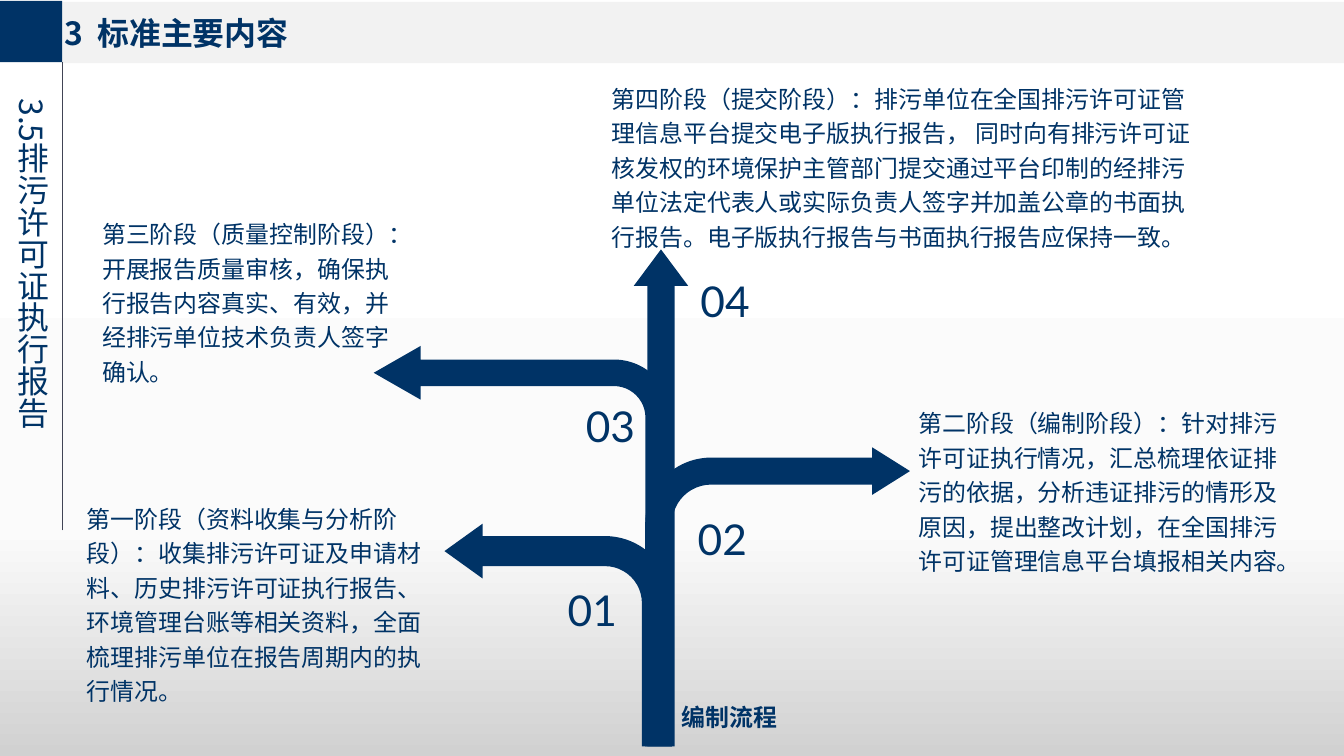
import lxml.etree
import pptx
import pptx.dml.color
import pptx.enum.dml
import pptx.enum.shapes
import pptx.enum.text
import pptx.oxml.ns
import pptx.util

Inches = pptx.util.Inches
Pt = pptx.util.Pt
SHAPES = pptx.enum.shapes.MSO_SHAPE
ANCHOR = pptx.enum.text.MSO_ANCHOR
FIT = pptx.enum.text.MSO_AUTO_SIZE
qn = pptx.oxml.ns.qn

COLOURS = {"navy": "003366", "band": "F2F2F2", "rule": "414455"}
BACKGROUND_STOPS = {14: "FFFFFF", 70: "FBFBFB", 100: "D1D1D1"}
CHINESE = "Noto Sans CJK SC"
LATIN = "Lato"
NO_MARGINS = {f"margin_{side}": 0 for side in ("left", "top", "right", "bottom")}
LABEL_FRAME = {"word_wrap": False, "auto_size": FIT.SHAPE_TO_FIT_TEXT}
STAGE_FRAME = {"word_wrap": True, "vertical_anchor": ANCHOR.MIDDLE}

# Stage descriptions: place and wording
STAGES = [
    ((0.81, 5.1, 3.84, 2.4),
     "第一阶段（资料收集与分析阶段）：收集排污许可证及申请材料、历史排污许可证执行报告、"
     "环境管理台账等相关资料，全面梳理排污单位在报告周期内的执行情况。"),
    ((9.51, 3.51, 4.12, 3.22),
     "第二阶段（编制阶段）：针对排污许可证执行情况，汇总梳理依证排污的依据，"
     "分析违证排污的情形及原因，提出整改计划，在全国排污许可证管理信息平台填报相关内容。"),
    ((0.97, 1.96, 3.31, 2.36),
     "第三阶段（质量控制阶段）：开展报告质量审核，确保执行报告内容真实、有效，"
     "并经排污单位技术负责人签字确认。"),
    ((6.3, 0.8, 6.43, 1.85),
     "第四阶段（提交阶段）：排污单位在全国排污许可证管理信息平台提交电子版执行报告， "
     "同时向有排污许可证核发权的环境保护主管部门提交通过平台印制的经排污单位法定代表人"
     "或实际负责人签字并加盖公章的书面执行报告。电子版执行报告与书面执行报告应保持一致。"),
]
NUMBER_PLACES = [(5.84, 5.67, 0.91, 1.3), (7.2, 4.93, 0.78, 1.3),
                 (6.03, 3.75, 0.88, 1.3), (7.23, 2.44, 0.94, 1.3)]

# Arrows: shape, place, adjustments, mirrored
ARROWS = [
    (SHAPES.UP_ARROW, (6.63, 2.61, 0.57, 5.2), (0.5, 0.671), False),
    (SHAPES.BENT_ARROW, (3.91, 3.62, 3.12, 3.64), (0.089, 0.09, 0.157, 0.195), True),
    (SHAPES.BENT_ARROW, (6.75, 4.68, 2.77, 3.13), (0.102, 0.09, 0.143, 0.249), False),
    (SHAPES.BENT_ARROW, (4.65, 5.48, 2.38, 2.33), (0.135, 0.123, 0.171, 0.301), True),
]


def rgb(name):
    return pptx.dml.color.RGBColor.from_string(COLOURS[name])


def apply(target, values):
    for name, value in values.items():
        setattr(target, name, value)


def paint_background(page):
    fill = page.background.fill
    fill.gradient()
    fill.gradient_angle = 270
    stops = page.element.xpath(".//p:bg//a:gsLst")[0]
    for stop in list(stops):
        stops.remove(stop)
    for percent, colour in BACKGROUND_STOPS.items():
        stop = lxml.etree.SubElement(stops, qn("a:gs"), pos=str(percent * 1000))
        lxml.etree.SubElement(stop, qn("a:srgbClr"), val=colour)


def add_filled(page, kind, place, colour, adjustments=(), mirrored=False):
    shape = page.shapes.add_shape(kind, *map(Inches, place))
    shape.shadow.inherit = False
    shape.fill.solid()
    shape.fill.fore_color.rgb = rgb(colour)
    shape.line.fill.background()
    for index, value in enumerate(adjustments):
        shape.adjustments[index] = value
    if mirrored:
        shape.element.spPr.find(qn("a:xfrm")).set("flipH", "1")


def add_rule(page, start, end):
    line = page.shapes.add_connector(
        pptx.enum.shapes.MSO_CONNECTOR.STRAIGHT, *map(Inches, start + end))
    line.line.color.rgb = rgb("rule")
    line.line.width = Pt(0.25)
    lxml.etree.SubElement(line.element.spPr, qn("a:effectLst"))


def add_span(para, text, size, font=CHINESE, bold=False):
    span = para.add_run()
    span.text = text
    apply(span.font, {"size": Pt(size), "name": font, "bold": bold})
    span.font.color.rgb = rgb("navy")
    lxml.etree.SubElement(span.font._element, qn("a:ea"), typeface=font)
    return span


def add_text(page, place, text, size, frame, font=CHINESE, bold=False, spacing=None):
    box = page.shapes.add_textbox(*map(Inches, place))
    apply(box.text_frame, frame)
    para = box.text_frame.paragraphs[0]
    apply(para, spacing or {})
    if text:
        add_span(para, text, size, font, bold)
    return box


def add_stage_text(page, place, text, size, font):
    spacing = {"line_spacing": 1.2, "space_before": Pt(size * 0.2)}
    add_text(page, place, text, size, STAGE_FRAME, font, spacing=spacing)


def add_title(page):
    box = add_text(page, (0.67, 0.14, 2.45, 0.41), "3", 24,
                   {**LABEL_FRAME, **NO_MARGINS}, bold=True)
    para = box.text_frame.paragraphs[0]
    gap = add_span(para, " ", 24, bold=True)
    gap.font._element.set("spc", "540")
    add_span(para, "标准主要内容", 24, bold=True)


def add_side_heading(page):
    frame = {"word_wrap": True, "auto_size": FIT.SHAPE_TO_FIT_TEXT, **NO_MARGINS}
    box = add_text(page, (0.14, 1.03, 0.4, 5.36), "3.5排污许可证执行报告", 24, frame)
    box.element.xpath(".//a:bodyPr")[0].set("vert", "eaVert")


def main():
    deck = pptx.Presentation()
    apply(deck, {"slide_width": Inches(14.06), "slide_height": Inches(7.91)})
    page = deck.slides.add_slide(deck.slide_layouts[6])
    paint_background(page)

    # Header and side heading
    add_filled(page, SHAPES.RECTANGLE, (0.65, 0.02, 13.41, 0.64), "band")
    add_filled(page, SHAPES.RECTANGLE, (0, 0.01, 0.65, 0.64), "navy")
    add_title(page)
    add_side_heading(page)
    add_rule(page, (0.65, 5.55), (0.65, 0.65))

    # Branching arrows
    for kind, place, adjustments, mirrored in ARROWS:
        add_filled(page, kind, place, "navy", adjustments, mirrored)

    # Stage descriptions and numbers
    for place, text in STAGES:
        add_stage_text(page, place, text, 18, CHINESE)
    for number, place in enumerate(NUMBER_PLACES, 1):
        add_stage_text(page, place, f"{number:02}", 32, LATIN)

    # Process label
    add_text(page, (7.03, 7.3, 1.21, 0.4), "编制流程", 18, LABEL_FRAME, bold=True)
    deck.save("out.pptx")


if __name__ == "__main__":
    main()
